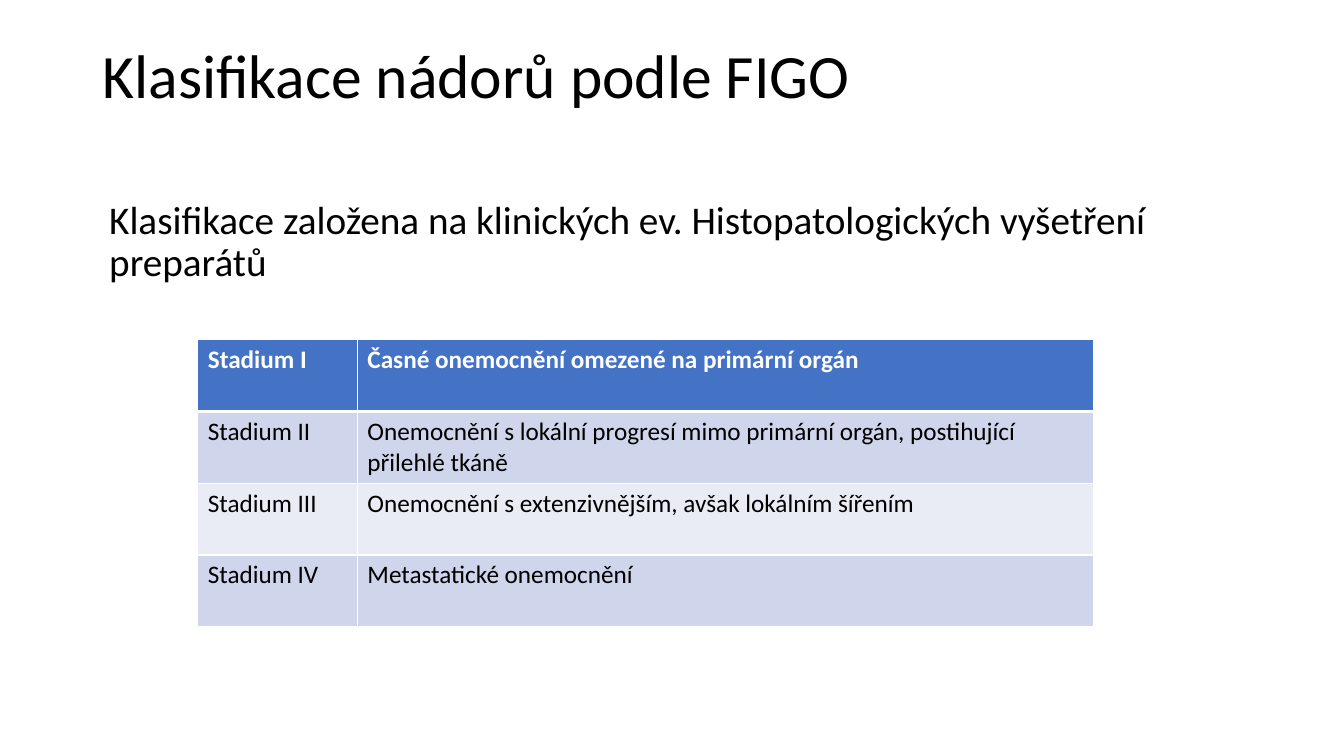
from lxml.etree import SubElement
from pptx import Presentation
from pptx.dml.color import RGBColor
from pptx.enum.text import MSO_ANCHOR, MSO_AUTO_SIZE, PP_ALIGN
from pptx.oxml.ns import qn
from pptx.util import Pt


def format_paragraph(paragraph, size, color, bold=False):
    paragraph.alignment = PP_ALIGN.LEFT
    paragraph.space_before = Pt(0)
    for run in paragraph.runs:
        run.font.name = "Calibri"
        run.font.size = Pt(size)
        run.font.bold = bold
        run.font.color.rgb = RGBColor.from_string(color)


def add_border(cell, side, width):
    line = SubElement(cell._tc.get_or_add_tcPr(), qn(f"a:{side}"), w=str(Pt(width)))
    fill = SubElement(line, qn("a:solidFill"))
    SubElement(fill, qn("a:srgbClr"), val="FFFFFF")


presentation = Presentation()
presentation.slide_width = Pt(960)
presentation.slide_height = Pt(540)
slide = presentation.slides.add_slide(presentation.slide_layouts[1])

title = slide.shapes.title
body = slide.placeholders[1]
placeholders = [
    (title, "Klasifikace nádorů podle FIGO", 66, 28.8, 104.4, 44),
    (body, "Klasifikace založena na klinických ev. Histopatologických vyšetření preparátů",
     70.8, 139.5, 342.7, 28),
]
for shape, text, left, top, height, size in placeholders:
    shape.left, shape.top = Pt(left), Pt(top)
    shape.width, shape.height = Pt(828), Pt(height)
    text_frame = shape.text_frame
    text_frame.text = text
    text_frame.word_wrap = True
    text_frame.auto_size = MSO_AUTO_SIZE.NONE
    text_frame.vertical_anchor = MSO_ANCHOR.TOP
    paragraph = text_frame.paragraphs[0]
    paragraph.line_spacing = 0.9
    format_paragraph(paragraph, size, "000000")

properties = body.text_frame.paragraphs[0]._p.get_or_add_pPr()
properties.set("marL", "0")
properties.set("indent", "0")
SubElement(properties, qn("a:buNone"))

stages = [
    ("Stadium I", "Časné onemocnění omezené na primární orgán"),
    ("Stadium II", "Onemocnění s lokální progresí mimo primární orgán, postihující přilehlé tkáně"),
    ("Stadium III", "Onemocnění s extenzivnějším, avšak lokálním šířením"),
    ("Stadium IV", "Metastatické onemocnění"),
]
row_fills = ["4472C4", "CFD5EA", "E9EBF5", "CFD5EA"]
row_height = 51.2
column_widths = [114, 526]

table = slide.shapes.add_table(
    len(stages), len(column_widths), Pt(141.3), Pt(242.8),
    Pt(sum(column_widths)), Pt(row_height * len(stages))).table
for column, width in zip(table.columns, column_widths):
    column.width = Pt(width)

for row_index, (stage, row_fill) in enumerate(zip(stages, row_fills)):
    table.rows[row_index].height = Pt(row_height)
    is_header = row_index == 0
    for column_index, text in enumerate(stage):
        cell = table.cell(row_index, column_index)
        cell.text_frame.text = text
        format_paragraph(cell.text_frame.paragraphs[0], 18,
                         "FFFFFF" if is_header else "000000", is_header)
        for side in ("lnL", "lnR", "lnT", "lnB"):
            thick = (is_header and side == "lnB") or (row_index == 1 and side == "lnT")
            add_border(cell, side, 3 if thick else 1)
        cell.fill.solid()
        cell.fill.fore_color.rgb = RGBColor.from_string(row_fill)

presentation.save("out.pptx")
